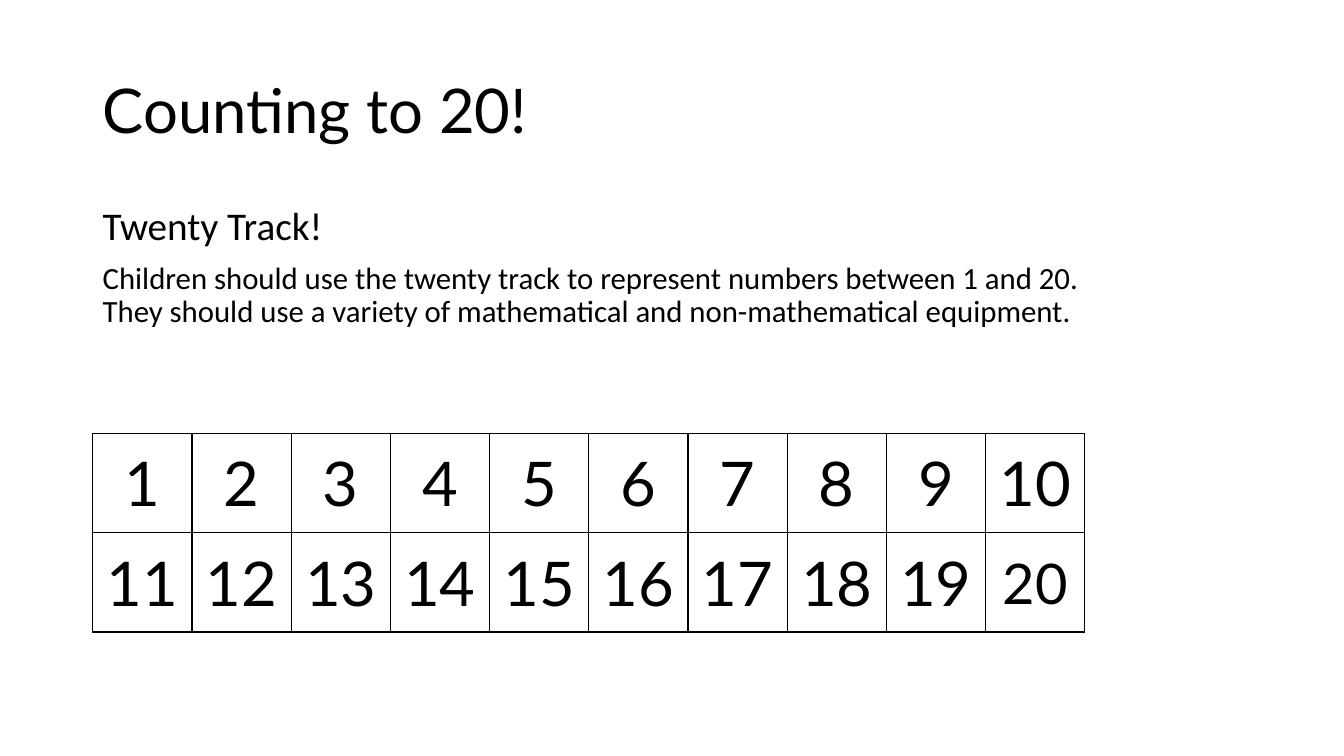
"""Build the Counting to 20 slide with its twenty track."""
from dataclasses import dataclass

from lxml import etree
from pptx import Presentation
from pptx import util as u
from pptx.dml.color import RGBColor
from pptx.enum import text
from pptx.oxml import ns


@dataclass(frozen=True)
class Theme:
    """Hold the colours, fonts and type sizes of the slide."""
    ink: str = "000000"
    paper: str = "FFFFFF"
    display_font: str = "Lato"
    body_font: str = "Calibri"
    title_size: int = 44
    heading_size: int = 28
    body_size: int = 22
    number_size: int = 44
    last_number_size: int = 40
    border_width: int = 1


THEME = Theme()
COLUMNS, ROWS = 10, 2


def add_span(para, words, size, font):
    """Add one run of ink-coloured text to a paragraph."""
    span = para.add_run()
    span.text = words
    span.font.size = u.Pt(size)
    span.font.name = font
    span.font.color.rgb = RGBColor.from_string(THEME.ink)


def add_text(page, left, top, width, height, paragraphs, font, anchor):
    """Add a text box from (size, lines) paragraphs."""
    box = page.shapes.add_textbox(*map(u.Inches, (left, top, width, height)))
    frame = box.text_frame
    frame.word_wrap = True
    frame.vertical_anchor = anchor
    for index, (size, lines) in enumerate(paragraphs):
        para = frame.add_paragraph() if index else frame.paragraphs[0]
        para.line_spacing = 0.9
        para.space_before = u.Pt(10 if index else 0)
        for row, line in enumerate(lines):
            if row:
                para.add_line_break()
            add_span(para, line, size, font)


def set_borders(cell):
    """Draw a solid border on each side of a table cell."""
    props = cell._tc.get_or_add_tcPr()
    for index, side in enumerate(("lnL", "lnR", "lnT", "lnB")):
        line = etree.Element(ns.qn(f"a:{side}"), w=str(u.Pt(THEME.border_width)))
        fill = etree.SubElement(line, ns.qn("a:solidFill"))
        etree.SubElement(fill, ns.qn("a:srgbClr"), val=THEME.ink)
        props.insert(index, line)


def add_number(cell, number):
    """Fill one table cell with a centred number."""
    cell.fill.solid()
    cell.fill.fore_color.rgb = RGBColor.from_string(THEME.paper)
    cell.vertical_anchor = text.MSO_ANCHOR.MIDDLE
    para = cell.text_frame.paragraphs[0]
    para.alignment = text.PP_ALIGN.CENTER
    is_last = number == ROWS * COLUMNS
    size = THEME.last_number_size if is_last else THEME.number_size
    add_span(para, str(number), size, THEME.display_font)
    set_borders(cell)


def add_track(page, left, top, width, height):
    """Add the number track as an even grid of cells."""
    frame = page.shapes.add_table(
        ROWS, COLUMNS, *map(u.Inches, (left, top, width, height)))
    table = frame.table
    table.first_row = table.horz_banding = False
    for column in table.columns:
        column.width = u.Inches(width / COLUMNS)
    for row in table.rows:
        row.height = u.Inches(height / ROWS)
    for number, cell in enumerate(table.iter_cells(), start=1):
        add_number(cell, number)


def main():
    """Build and save the deck."""
    deck = Presentation()
    deck.slide_width, deck.slide_height = u.Inches(13.33), u.Inches(7.5)
    page = deck.slides.add_slide(deck.slide_layouts[6])
    add_text(page, 0.92, 0.4, 9.6, 1.45,
             [(THEME.title_size, ["Counting to 20!"])],
             THEME.display_font, text.MSO_ANCHOR.MIDDLE)
    add_text(page, 0.92, 2, 11.64, 2.2, [
        (THEME.heading_size, ["Twenty Track!"]),
        (THEME.body_size, [
            "Children should use the twenty track to represent numbers between 1 and 20. ",
            "They should use a variety of mathematical and non-mathematical equipment.",
        ]),
    ], THEME.body_font, text.MSO_ANCHOR.TOP)
    add_track(page, 0.92, 4.3, 9.84, 1.97)
    deck.save("out.pptx")


if __name__ == "__main__":
    main()
